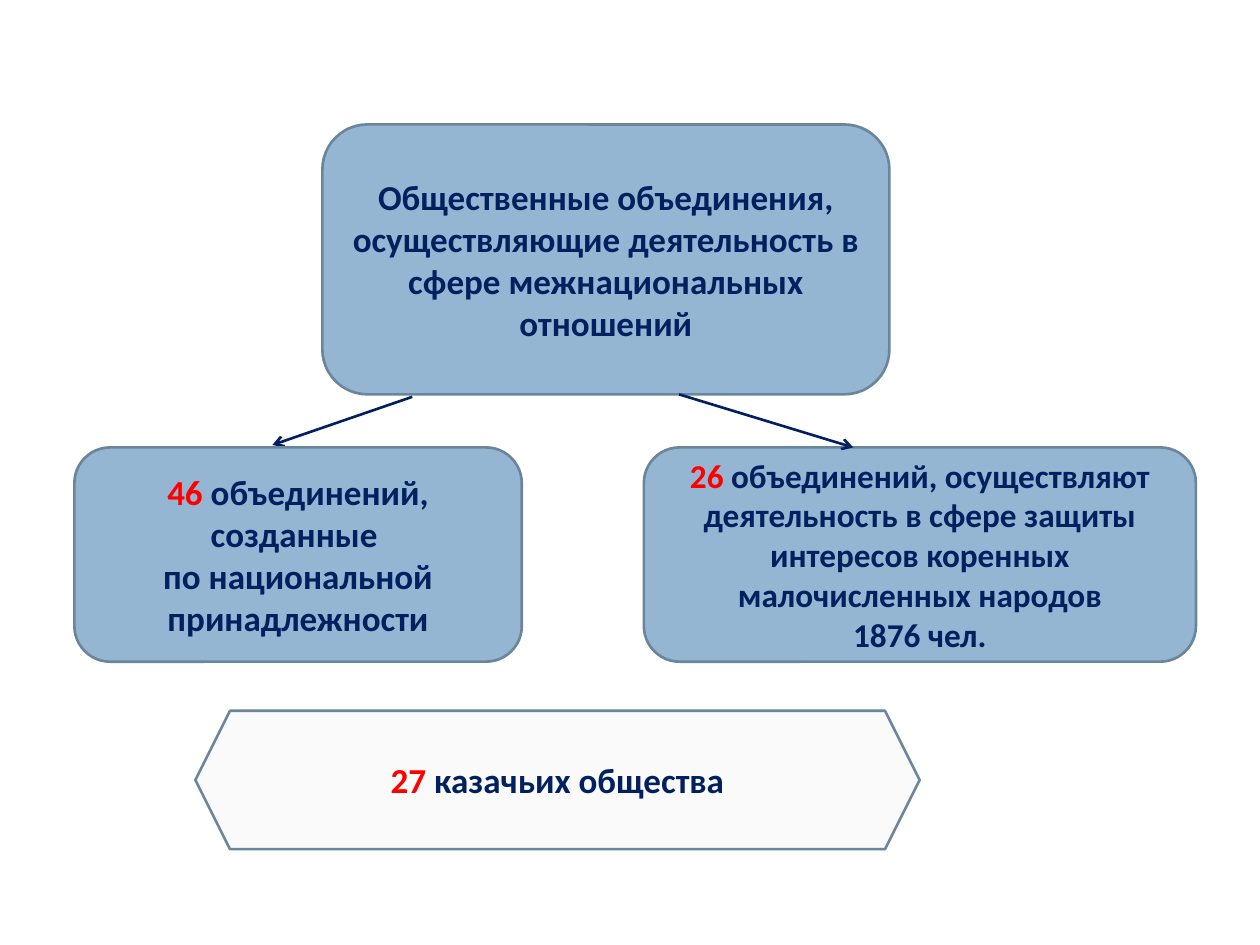
from dataclasses import dataclass

from lxml.etree import SubElement
from pptx import Presentation
from pptx.dml.color import RGBColor
from pptx.enum.shapes import MSO_CONNECTOR, MSO_SHAPE
from pptx.enum.text import MSO_ANCHOR, PP_ALIGN
from pptx.oxml.ns import qn
from pptx.util import Cm, Pt


@dataclass(frozen=True)
class Theme:
    box: RGBColor = RGBColor(0x94, 0xB6, 0xD2)
    pale: RGBColor = RGBColor(0xF2, 0xF2, 0xF2)
    border: RGBColor = RGBColor(0x6B, 0x85, 0x9A)
    navy: RGBColor = RGBColor(0x00, 0x20, 0x60)
    red: RGBColor = RGBColor(0xFF, 0x00, 0x00)
    font: str = "Calibri"
    body: Pt = Pt(20)
    small: Pt = Pt(19)
    line: Pt = Pt(1.5)


THEME = Theme()


def set_attrs(target, values):
    for name, value in values.items():
        setattr(target, name, value)


def add_run(p, text, color, size):
    r = p.add_run()
    r.text = text
    set_attrs(r.font, {"name": THEME.font, "size": size, "bold": True})
    r.font.color.rgb = color


def write_paragraph(p, number, text, size):
    p.alignment = PP_ALIGN.CENTER
    if number:
        add_run(p, number, THEME.red, size)
    for i, line in enumerate(text.split("\n")):
        if i:
            p.add_line_break()
        add_run(p, line, THEME.navy, size)


def add_block(s, kind, bounds, paragraphs, size=THEME.body, fill=THEME.box):
    sp = s.shapes.add_shape(kind, *map(Cm, bounds))
    sp.shadow.inherit = False
    sp.fill.solid()
    sp.fill.fore_color.rgb = fill
    sp.line.color.rgb = THEME.border
    sp.line.width = THEME.line
    tf = sp.text_frame
    set_attrs(tf, {"word_wrap": True, "vertical_anchor": MSO_ANCHOR.MIDDLE})
    for i, (number, text) in enumerate(paragraphs):
        p = tf.add_paragraph() if i else tf.paragraphs[0]
        write_paragraph(p, number, text, size)
    return sp


def set_opacity(sp, percent):
    color = sp.fill._xPr.find(qn("a:solidFill"))[0]
    SubElement(color, qn("a:alpha"), val=str(percent * 1000))


def add_arrow(s, *ends):
    c = s.shapes.add_connector(MSO_CONNECTOR.STRAIGHT, *map(Cm, ends))
    c.line.color.rgb = THEME.navy
    c.line.width = THEME.line
    SubElement(c.line._get_or_add_ln(), qn("a:tailEnd"), type="arrow")
    SubElement(c._element.spPr, qn("a:effectLst"))


def main():
    prs = Presentation()
    set_attrs(prs, {"slide_width": Cm(25.4), "slide_height": Cm(19.05)})
    s = prs.slides.add_slide(prs.slide_layouts[6])

    rounded = MSO_SHAPE.ROUNDED_RECTANGLE
    row_top, row_height = 9.02, 4.32
    add_block(s, rounded, (6.5, 2.51, 11.43, 5.44), [
        ("", "Общественные объединения, осуществляющие деятельность в "
             "сфере межнациональных отношений"),
    ])
    add_arrow(s, 8.31, 8, 5.49, 8.97)
    add_block(s, rounded, (12.98, row_top, 11.13, row_height), [
        ("26 ", "объединений, осуществляют деятельность в сфере защиты "
                "интересов коренных малочисленных народов"),
        ("", "1876 чел."),
    ], THEME.small)
    add_block(s, rounded, (1.5, row_top, 9.02, row_height), [
        ("46 ", "объединений, созданные \nпо национальной принадлежности"),
    ])
    cossacks = add_block(s, MSO_SHAPE.HEXAGON, (3.94, 14.33, 14.6, 2.79), [
        ("27", " казачьих общества"),
    ], fill=THEME.pale)
    set_opacity(cossacks, 35)
    add_arrow(s, 13.69, 7.95, 17.2, row_top)

    prs.save("out.pptx")


if __name__ == "__main__":
    main()
